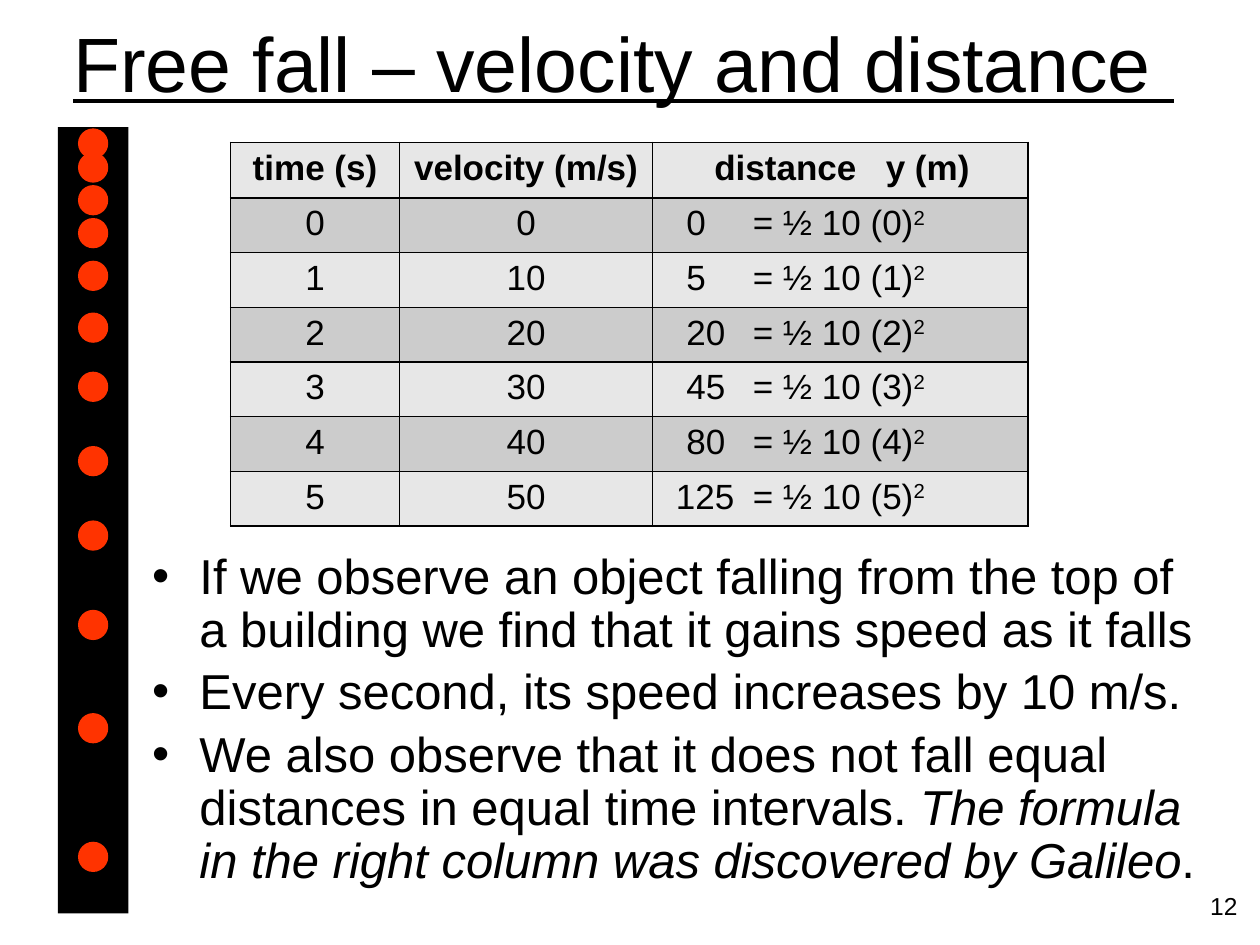
from lxml.etree import SubElement
from pptx import Presentation
from pptx.dml.color import RGBColor
from pptx.enum.shapes import MSO_SHAPE
from pptx.enum.text import MSO_ANCHOR, PP_ALIGN
from pptx.oxml.ns import qn
from pptx.util import Pt

COLOURS = {
    "ink": "000000",
    "paper": "FFFFFF",
    "ball": "FF3300",
    "light": "E7E7E7",
    "dark": "CCCCCC",
}
FONT = "Arial"
BALL_TOPS = [73.4, 87.1, 105.8, 124.6, 149, 178.6, 212.4, 254.9, 297.4, 348.5, 407.5, 481]
COLUMN_WIDTHS = [96.5, 144.7, 214.6]
HEADER_HEIGHT, ROW_HEIGHT = 31.7, 29.5
GRAVITY = 10
BULLETS = [
    [("If we observe an object falling from the top of a building "
      "we find that it gains speed as it falls", {})],
    [("Every second, its speed increases by 10 m/s.", {})],
    [("We also observe that it does not fall equal "
      "distances in equal time intervals. ", {}),
     ("The formula in the right column was discovered by Galileo", {"italic": True}),
     (".", {})],
]


def colour(name):
    return RGBColor.from_string(COLOURS[name])


def add_span(para, text, size, **formats):
    span = para.add_run()
    span.text = text
    span.font.color.rgb = colour("ink")
    for name, value in {"name": FONT, "size": Pt(size), **formats}.items():
        setattr(span.font, name, value)
    return span


def add_box(page, left, top, width, height, anchor=MSO_ANCHOR.TOP):
    frame = page.shapes.add_textbox(Pt(left), Pt(top), Pt(width), Pt(height)).text_frame
    frame.word_wrap = True
    frame.vertical_anchor = anchor
    return frame


def add_line(page, place, text, size, align, anchor=MSO_ANCHOR.TOP, **formats):
    """Add a text box that holds a single paragraph."""
    para = add_box(page, *place, anchor).paragraphs[0]
    para.alignment = align
    add_span(para, text, size, **formats)


def add_filled(group, kind, left, top, width, height, fill):
    shape = group.shapes.add_shape(kind, Pt(left), Pt(top), Pt(width), Pt(height))
    shape.shadow.inherit = False
    shape.fill.solid()
    shape.fill.fore_color.rgb = colour(fill)
    shape.line.fill.background()


def add_falling_ball(page):
    group = page.shapes.add_group_shape()
    add_filled(group, MSO_SHAPE.RECTANGLE, 33.1, 72.7, 40.3, 449.3, "ink")
    for top in BALL_TOPS:
        add_filled(group, MSO_SHAPE.OVAL, 44.6, top, 17.3, 17.3, "ball")


def set_tabs(para, *stops):
    tabs = SubElement(para._p.get_or_add_pPr(), qn("a:tabLst"))
    for stop in stops:
        SubElement(tabs, qn("a:tab"), pos=str(Pt(stop)), algn="l")


def style_cell(cell, fill):
    properties = cell._tc.get_or_add_tcPr()
    for side in ("a:lnL", "a:lnR", "a:lnT", "a:lnB"):
        line = SubElement(properties, qn(side), w=str(Pt(1)))
        SubElement(SubElement(line, qn("a:solidFill")), qn("a:srgbClr"), val=COLOURS["ink"])
    cell.fill.solid()
    cell.fill.fore_color.rgb = colour(fill)


def add_distance(para, time):
    """Write the distance and its formula, lined up on tab stops."""
    distance = GRAVITY * time ** 2 // 2
    set_tabs(para, 6 if distance >= 100 else 12, 50)
    add_span(para, f"\t{distance}\t= ½ {GRAVITY} ({time})", 20)
    add_span(para, "2", 20).font._element.set("baseline", "30000")


def add_fall_table(page):
    times = range(6)
    frame = page.shapes.add_table(
        len(times) + 1, len(COLUMN_WIDTHS), Pt(131.8), Pt(81.4),
        Pt(sum(COLUMN_WIDTHS)), Pt(HEADER_HEIGHT + ROW_HEIGHT * len(times)))
    table = frame.table
    for column, width in zip(table.columns, COLUMN_WIDTHS):
        column.width = Pt(width)
    for index, row in enumerate(table.rows):
        row.height = Pt(ROW_HEIGHT if index else HEADER_HEIGHT)
        for cell in row.cells:
            style_cell(cell, "dark" if index % 2 else "light")
        paras = [cell.text_frame.paragraphs[0] for cell in row.cells]
        for para in paras[:2]:
            para.alignment = PP_ALIGN.CENTER
        if index:
            time = index - 1
            add_span(paras[0], str(time), 20)
            add_span(paras[1], str(GRAVITY * time), 20)
            add_distance(paras[2], time)
        else:
            set_tabs(paras[2], 28, 126)
            for para, text in zip(paras, ["time (s)", "velocity (m/s)", "\tdistance\ty (m)"]):
                add_span(para, text, 20, bold=True)


def add_bullets(page):
    frame = add_box(page, 79.9, 311.8, 617, 211.7)
    for index, spans in enumerate(BULLETS):
        para = frame.add_paragraph() if index else frame.paragraphs[0]
        para.line_spacing = 0.9
        para.space_before = Pt(5.6)
        properties = para._p.get_or_add_pPr()
        properties.set("marL", str(Pt(27)))
        properties.set("indent", str(Pt(-27)))
        SubElement(properties, qn("a:buFont"), typeface=FONT)
        SubElement(properties, qn("a:buChar"), char="•")
        for text, formats in spans:
            add_span(para, text, 28, **formats)


def main():
    deck = Presentation()
    deck.slide_width, deck.slide_height = Pt(720), Pt(540)
    page = deck.slides.add_slide(deck.slide_layouts[6])
    page.background.fill.solid()
    page.background.fill.fore_color.rgb = colour("paper")
    add_line(page, (32.4, 0, 648, 70.6), "Free fall – velocity and distance ", 44,
             PP_ALIGN.CENTER, MSO_ANCHOR.MIDDLE, underline=True)
    add_bullets(page)
    add_line(page, (676, 505.4, 38.2, 26.6), "12", 14, PP_ALIGN.RIGHT)
    add_fall_table(page)
    add_falling_ball(page)
    deck.save("out.pptx")


if __name__ == "__main__":
    main()
